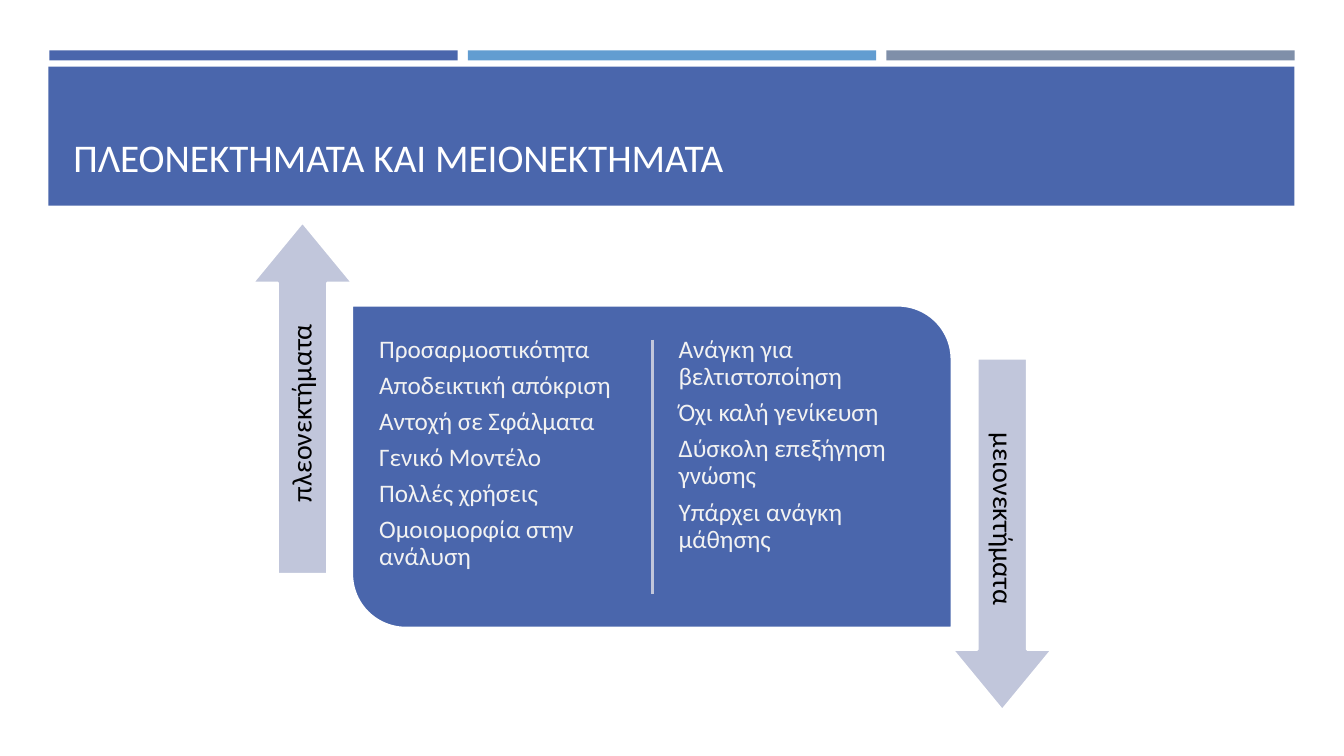
from lxml import etree
from pptx import Presentation
from pptx.dml.color import RGBColor
from pptx.enum.shapes import MSO_CONNECTOR, MSO_SHAPE
from pptx.enum.text import MSO_ANCHOR as Anchor, PP_ALIGN as Align
from pptx.oxml.ns import qn
from pptx.util import Inches, Pt

COLORS = {
    "blue": "4A66AC",
    "sky": "629DD1",
    "slate": "7F8FA9",
    "lavender": "C1C6DB",
    "white": "FFFFFF",
    "off_white": "F2F2F2",
    "black": "000000",
}
FONT = "Calibri"
LINE_WIDTH = 1.75
ADVANTAGES = [
    "Προσαρμοστικότητα",
    "Αποδεικτική απόκριση",
    "Αντοχή σε Σφάλματα",
    "Γενικό Μοντέλο",
    "Πολλές χρήσεις",
    "Ομοιομορφία στην ανάλυση",
]
DISADVANTAGES = [
    "Ανάγκη για βελτιστοποίηση",
    "Όχι καλή γενίκευση",
    "Δύσκολη επεξήγηση γνώσης",
    "Υπάρχει ανάγκη μάθησης",
]


def color(name):
    """Return the named colour."""
    return RGBColor.from_string(COLORS[name])


def add_block(slide, kind, box, fill, outline=None, adjustments=()):
    """Add a filled preset shape, outlined if a colour is given."""
    shape = slide.shapes.add_shape(kind, *map(Inches, box))
    shape.shadow.inherit = False
    shape.fill.solid()
    shape.fill.fore_color.rgb = color(fill)
    if outline:
        shape.line.color.rgb = color(outline)
        shape.line.width = Pt(LINE_WIDTH)
    else:
        shape.line.fill.background()
    for index, value in enumerate(adjustments):
        shape.adjustments[index] = value
    return shape


def add_text(slide, box, lines, size, ink, inset=0.07, anchor=Anchor.TOP,
             align=Align.LEFT):
    """Add a wrapping text box with one paragraph per line."""
    shape = slide.shapes.add_textbox(*map(Inches, box))
    frame = shape.text_frame
    frame.word_wrap = True
    frame.vertical_anchor = anchor
    frame.margin_left = frame.margin_right = Inches(inset)
    frame.margin_top = frame.margin_bottom = Inches(min(inset, 0.08))
    frame.text = "\n".join(lines)
    for paragraph in frame.paragraphs:
        paragraph.alignment = align
        paragraph.line_spacing = 0.9
        paragraph.space_after = Pt(size * 0.35)
        paragraph.font.size = Pt(size)
        paragraph.font.name = FONT
        paragraph.font.color.rgb = color(ink)
    return shape


def add_header(slide, title):
    """Add the three accent strips and the title band."""
    for index, fill in enumerate(("blue", "sky", "slate")):
        box = (0.49 + index * 4.15, 0.5, 4.05, 0.1)
        add_block(slide, MSO_SHAPE.RECTANGLE, box, fill)
    add_block(slide, MSO_SHAPE.RECTANGLE, (0.48, 0.66, 12.36, 1.38), "blue")
    shape = add_text(slide, (0.63, 0.8, 12.06, 1.08), [title], 28, "white",
                     inset=0.1, anchor=Anchor.BOTTOM)
    paragraph = shape.text_frame.paragraphs[0]
    paragraph.space_after = Pt(0)


def add_divider(slide, x, top, bottom):
    """Add the vertical line between the two columns."""
    line = slide.shapes.add_connector(
        MSO_CONNECTOR.STRAIGHT, Inches(x), Inches(top), Inches(x), Inches(bottom))
    line.line.color.rgb = color("lavender")
    line.line.width = Pt(LINE_WIDTH)
    etree.SubElement(line._element.spPr, qn("a:effectLst"))


def add_labelled_arrow(slide, center_x, center_y, rotation, label):
    """Add a turned arrow whose label sits nearer to its tail."""
    width, height, label_width, label_height = 3.49, 0.99, 3.19, 0.49
    arrow = add_block(
        slide, MSO_SHAPE.RIGHT_ARROW,
        (center_x - width / 2, center_y - height / 2, width, height),
        "lavender", "white", (0.498, 0.607))
    label_y = center_y + (0.15 if rotation == 270 else -0.15)
    text = add_text(
        slide,
        (center_x - label_width / 2, label_y - label_height / 2,
         label_width, label_height),
        [label], 20, "black", 0.08, Anchor.MIDDLE, Align.CENTER)
    arrow.rotation = text.rotation = rotation


def main():
    """Build and save the slide."""
    presentation = Presentation()
    presentation.slide_width = Inches(13.33)
    presentation.slide_height = Inches(7.5)
    slide = presentation.slides.add_slide(presentation.slide_layouts[6])

    add_header(slide, "ΠΛΕΟΝΕΚΤΗΜΑΤΑ ΚΑΙ ΜΕΙΟΝΕΚΤΗΜΑΤΑ")
    add_block(slide, MSO_SHAPE.ROUND_2_DIAG_RECTANGLE, (3.49, 3.03, 5.95, 3.2),
              "blue", "white", (0, 0.167))
    add_divider(slide, 6.47, 3.37, 5.89)
    for left, lines in ((3.69, ADVANTAGES), (6.66, DISADVANTAGES)):
        add_text(slide, (left, 3.27, 2.58, 2.72), lines, 18, "off_white")
    add_labelled_arrow(slide, 3, 3.95, 270, "πλεονεκτήματα")
    add_labelled_arrow(slide, 9.94, 5.3, 90, "μειονεκτήματα")

    presentation.save("out.pptx")


if __name__ == "__main__":
    main()
